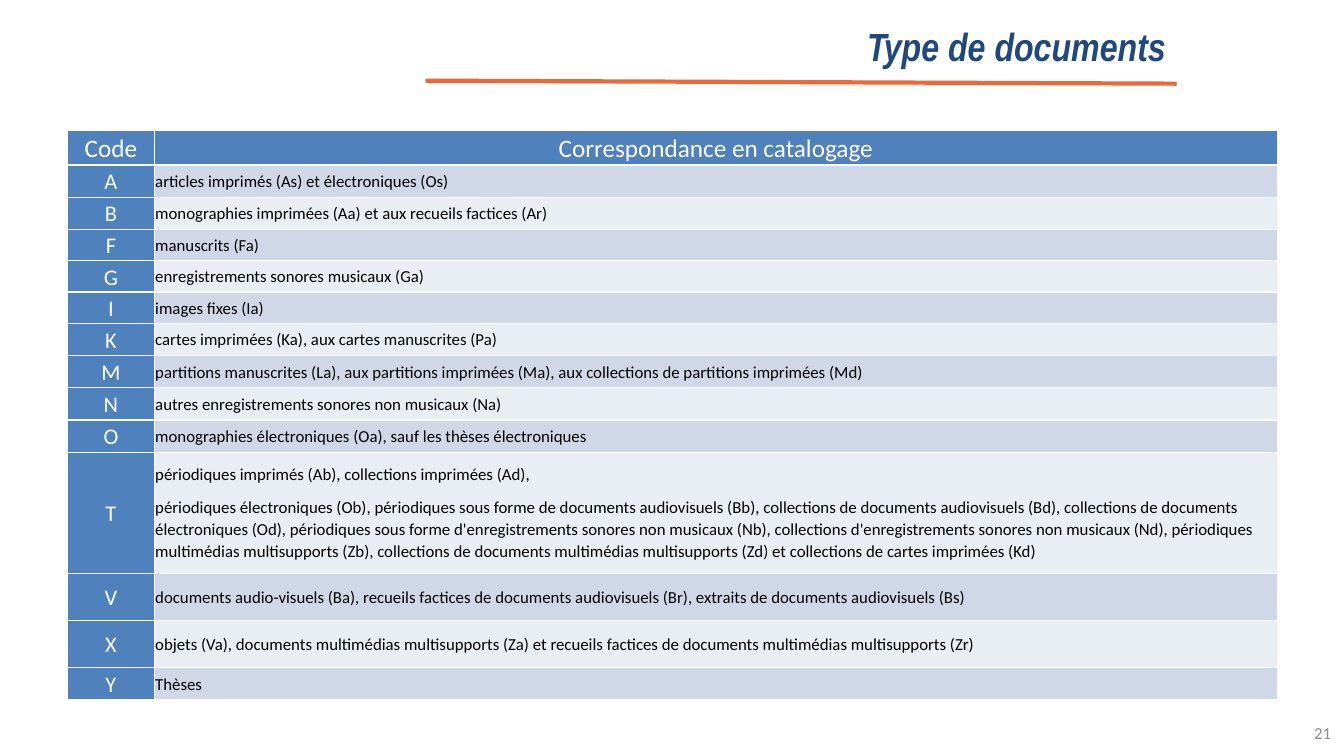
import pptx
import pptx.dml.color
import pptx.enum.shapes
import pptx.enum.text
import pptx.oxml
import pptx.oxml.ns
import pptx.util
from pptx.util import Inches

ALIGN = pptx.enum.text.PP_ALIGN
MIDDLE = pptx.enum.text.MSO_ANCHOR.MIDDLE
HEADER_FILL = "4F81BD"
BAND_FILLS = ("D0D8E8", "E9EDF4")
HEADERS = ("Code", "Correspondance en catalogage")
HEADER_HEIGHT = 0.34
DOCUMENT_TYPES = [
    ("A", 0.32, ["articles imprimés (As) et électroniques (Os)"]),
    ("B", 0.32, ["monographies imprimées (Aa) et aux recueils factices (Ar)"]),
    ("F", 0.3, ["manuscrits (Fa)"]),
    ("G", 0.3, ["enregistrements sonores musicaux (Ga)"]),
    ("I", 0.3, ["images fixes (Ia)"]),
    ("K", 0.32, ["cartes imprimées (Ka), aux cartes manuscrites (Pa)"]),
    ("M", 0.32, ["partitions manuscrites (La), aux partitions imprimées (Ma), "
                 "aux collections de partitions imprimées (Md)"]),
    ("N", 0.32, ["autres enregistrements sonores non musicaux (Na)"]),
    ("O", 0.32, ["monographies électroniques (Oa), sauf les thèses électroniques"]),
    ("T", 1.2, [
        "périodiques imprimés (Ab), collections imprimées (Ad),",
        "périodiques électroniques (Ob), périodiques sous forme de documents audiovisuels (Bb), "
        "collections de documents audiovisuels (Bd), collections de documents électroniques (Od), "
        "périodiques sous forme d'enregistrements sonores non musicaux (Nb), "
        "collections d'enregistrements sonores non musicaux (Nd), "
        "périodiques multimédias multisupports (Zb), "
        "collections de documents multimédias multisupports (Zd) "
        "et collections de cartes imprimées (Kd)",
    ]),
    ("V", 0.47, ["documents audio-visuels (Ba), recueils factices de documents audiovisuels (Br), "
                 "extraits de documents audiovisuels (Bs)"]),
    ("X", 0.47, ["objets (Va), documents multimédias multisupports (Za) "
                 "et recueils factices de documents multimédias multisupports (Zr)"]),
    ("Y", 0.3, ["Thèses"]),
]


def color(value):
    """Return the RGB colour of a hex string."""
    return pptx.dml.color.RGBColor.from_string(value)


def add_run(paragraph, text, size, value, font="Calibri", emphasis=False):
    """Append a formatted run to a paragraph."""
    run = paragraph.add_run()
    run.text = text
    run.font.name = font
    run.font.size = pptx.util.Pt(size)
    run.font.color.rgb = color(value)
    run.font.bold = run.font.italic = emphasis


def add_text(slide, box, text, size, value, **style):
    """Add a right-aligned, vertically centred text box."""
    frame = slide.shapes.add_textbox(*map(Inches, box)).text_frame
    frame.word_wrap = True
    frame.vertical_anchor = MIDDLE
    frame.paragraphs[0].alignment = ALIGN.RIGHT
    add_run(frame.paragraphs[0], text, size, value, **style)


def add_rule(slide, start, end, value, width):
    """Add a straight line without a shadow."""
    line = slide.shapes.add_connector(
        pptx.enum.shapes.MSO_CONNECTOR.STRAIGHT, *map(Inches, start + end))
    line.line.color.rgb = color(value)
    line.line.width = pptx.util.Pt(width)
    line._element.spPr.append(pptx.oxml.parse_xml(
        f"<a:effectLst {pptx.oxml.ns.nsdecls('a')}/>"))


def set_borders(cell, value, width):
    """Draw the same border on all four sides of a cell."""
    properties = cell._tc.get_or_add_tcPr()
    for index, side in enumerate(("lnL", "lnR", "lnT", "lnB")):
        properties.insert(index, pptx.oxml.parse_xml(
            f"<a:{side} {pptx.oxml.ns.nsdecls('a')} w='{pptx.util.Pt(width)}'>"
            f"<a:solidFill><a:srgbClr val='{value}'/></a:solidFill></a:{side}>"))


def fill_cell(cell, texts, size, value, fill, alignment):
    """Write paragraphs into a cell and format it."""
    cell.fill.solid()
    cell.fill.fore_color.rgb = color(fill)
    set_borders(cell, "FFFFFF", 1)
    cell.vertical_anchor = MIDDLE
    cell.margin_left = cell.margin_right = Inches(0.01)
    cell.margin_top = cell.margin_bottom = Inches(0.01)
    frame = cell.text_frame
    for index, text in enumerate(texts):
        paragraph = frame.add_paragraph() if index else frame.paragraphs[0]
        paragraph.alignment = alignment
        paragraph.line_spacing = 1.07
        paragraph.space_after = pptx.util.Pt(8)
        add_run(paragraph, text, size, value)


def add_type_table(slide):
    """Add the table of document type codes."""
    heights = [HEADER_HEIGHT] + [height for _, height, _ in DOCUMENT_TYPES]
    table = slide.shapes.add_table(
        len(heights), 2, Inches(0.67), Inches(1.29), Inches(12), Inches(sum(heights))).table
    for column, width in zip(table.columns, (0.86, 11.14)):
        column.width = Inches(width)
    for row, height in zip(table.rows, heights):
        row.height = Inches(height)
    for index, header in enumerate(HEADERS):
        fill_cell(table.cell(0, index), [header], 18, "FFFFFF", HEADER_FILL, ALIGN.CENTER)
    for index, (code, _, texts) in enumerate(DOCUMENT_TYPES):
        fill_cell(table.cell(index + 1, 0), [code], 16, "FFFFFF", HEADER_FILL, ALIGN.CENTER)
        fill_cell(table.cell(index + 1, 1), texts, 12, "000000", BAND_FILLS[index % 2], ALIGN.LEFT)


def main():
    """Build and save the slide."""
    presentation = pptx.Presentation()
    presentation.slide_width = Inches(13.33)
    presentation.slide_height = Inches(7.5)
    slide = presentation.slides.add_slide(presentation.slide_layouts[6])
    add_rule(slide, (4.22, 0.8), (11.67, 0.83), "EC6839", 3)
    add_type_table(slide)
    add_text(slide, (12.66, 7.07, 0.64, 0.4), "21", 12, "8C8C8C")
    add_text(slide, (1.09, 0.16, 10.57, 0.58), "Type de documents", 28, "1F497D",
             font="Arial Narrow", emphasis=True)
    presentation.save("out.pptx")


if __name__ == "__main__":
    main()
